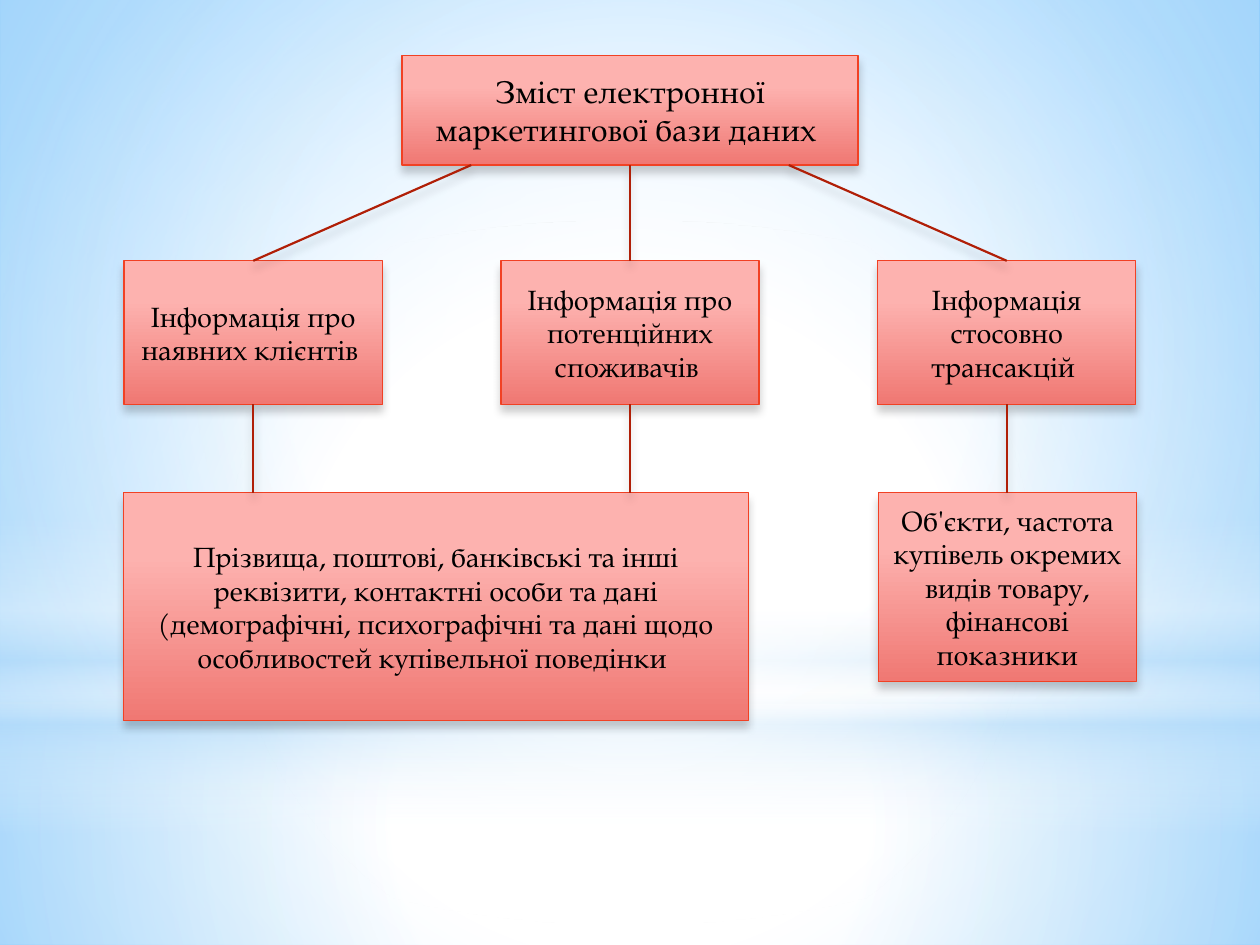
from dataclasses import dataclass
from typing import Any, NamedTuple

from lxml import etree
from pptx import Presentation
from pptx.dml.color import RGBColor
from pptx.enum.shapes import MSO_CONNECTOR, MSO_SHAPE
from pptx.enum.text import MSO_ANCHOR, PP_ALIGN
from pptx.oxml.ns import qn
from pptx.util import Inches, Pt

RECTANGLE = MSO_SHAPE.RECTANGLE
ELLIPSE = MSO_SHAPE.OVAL
STRAIGHT = MSO_CONNECTOR.STRAIGHT
MIDDLE = MSO_ANCHOR.MIDDLE
CENTER = PP_ALIGN.CENTER

FONT = "TeX Gyre Pagella"
TEXT_COLOR = "000000"
BORDER_COLOR = "F14124"
LINK_COLOR = "B01F07"
WHITE = "FFFFFF"
PALE_BLUE = "B4DCFA"

COLUMN_CENTERS = (2.01, 5, 7.99)
COLUMN_WIDTH = 2.05
LEFT_EDGE = 0.98
RIGHT_EDGE = 6.97
TOP_BOTTOM = 1.31
GROUP_TOP = 2.07
GROUP_HEIGHT = 1.14
GROUP_BOTTOM = GROUP_TOP + GROUP_HEIGHT
DETAIL_TOP = 3.91


class Stop(NamedTuple):
    position: int
    color: str
    opacity: int = 100


@dataclass(frozen=True)
class Gradient:
    stops: tuple[Stop, ...]
    focus: tuple[int, int, int, int] | None = None


@dataclass(frozen=True)
class Layer:
    shape_type: Any
    top: float
    height: float
    gradient: Gradient


@dataclass(frozen=True)
class Node:
    left: float
    top: float
    width: float
    height: float
    text: str
    size: int = 16


@dataclass(frozen=True)
class Link:
    start: tuple[float, float]
    end: tuple[float, float]


CENTERED = (50, 50, 50, 50)
BACKGROUND = Gradient(
    (Stop(0, WHITE), Stop(42, WHITE), Stop(100, "63BCFF")), (24, 44, 24, 12)
)
NODE_FILL = Gradient((Stop(28, "FDB2AF"), Stop(100, "F07873")))

LAYERS = (
    Layer(RECTANGLE, 5.58, 1.92, Gradient(
        (Stop(0, WHITE, 91), Stop(37, WHITE, 76), Stop(100, PALE_BLUE, 79)), CENTERED)),
    Layer(RECTANGLE, 0, 5.58, Gradient(
        (Stop(0, WHITE, 89), Stop(48, WHITE, 62), Stop(100, PALE_BLUE, 79)), CENTERED)),
    Layer(RECTANGLE, 4.12, 2.5, Gradient(
        (Stop(0, WHITE, 0), Stop(29, WHITE, 30), Stop(45, PALE_BLUE, 40),
         Stop(55, WHITE, 26), Stop(65, PALE_BLUE, 60), Stop(100, WHITE, 0)))),
    Layer(ELLIPSE, 1.75, 5.58, Gradient((Stop(0, WHITE), Stop(56, WHITE, 0)), CENTERED)),
)

GROUP_TEXTS = (
    "Інформація про наявних клієнтів ",
    "Інформація про потенційних споживачів ",
    "Інформація стосовно трансакцій ",
)

NODES = (
    Node(3.19, 0.44, 3.62, 0.87, "Зміст електронної маркетингової бази даних ", 18),
    *(
        Node(center - COLUMN_WIDTH / 2, GROUP_TOP, COLUMN_WIDTH, GROUP_HEIGHT, text)
        for center, text in zip(COLUMN_CENTERS, GROUP_TEXTS)
    ),
    Node(LEFT_EDGE, DETAIL_TOP, 4.96, 1.81,
         "Прізвища, поштові, банківські та інші реквізити, контактні особи та дані "
         "(демографічні, психографічні та дані щодо особливостей купівельної поведінки "),
    Node(RIGHT_EDGE, DETAIL_TOP, COLUMN_WIDTH, 1.5,
         "Об'єкти, частота купівель окремих видів товару, фінансові показники"),
)

LINKS = (
    *(
        Link((center, GROUP_TOP), (start, TOP_BOTTOM))
        for center, start in zip(COLUMN_CENTERS, (3.74, 5, 6.26))
    ),
    *(Link((center, GROUP_BOTTOM), (center, DETAIL_TOP)) for center in COLUMN_CENTERS),
)


def rgb(color: str) -> RGBColor:
    return RGBColor.from_string(color)


def add_child(parent: Any, tag: str, **attributes: Any) -> Any:
    values = {name: str(value) for name, value in attributes.items()}
    return etree.SubElement(parent, qn(tag), values)


def add_color(parent: Any, color: str, opacity: int) -> None:
    element = add_child(parent, "a:srgbClr", val=color)
    if opacity < 100:
        add_child(element, "a:alpha", val=opacity * 1000)


def apply_gradient(fill: Any, properties: Any, gradient: Gradient) -> None:
    fill.solid()
    solid = properties.find(qn("a:solidFill"))
    element = etree.Element(qn("a:gradFill"), rotWithShape="1")
    stops = add_child(element, "a:gsLst")
    for stop in gradient.stops:
        item = add_child(stops, "a:gs", pos=stop.position * 1000)
        add_color(item, stop.color, stop.opacity)
    if gradient.focus:
        shade = add_child(element, "a:path", path="circle")
        edges = {side: inset * 1000 for side, inset in zip("ltrb", gradient.focus)}
        add_child(shade, "a:fillToRect", **edges)
    else:
        add_child(element, "a:lin", ang=5400000, scaled=0)
    properties.replace(solid, element)


def add_shadow(properties: Any) -> None:
    effects = properties.find(qn("a:effectLst"))
    if effects is None:
        effects = add_child(properties, "a:effectLst")
    shadow = add_child(effects, "a:outerShdw", blurRad=Pt(5), dist=Pt(4),
                       dir=5400000, algn="ctr", rotWithShape=1)
    add_color(shadow, "000000", 20)


def draw_layer(page: Any, layer: Layer) -> None:
    shape = page.shapes.add_shape(
        layer.shape_type, 0, Inches(layer.top), Inches(10), Inches(layer.height))
    shape.shadow.inherit = False
    shape.line.fill.background()
    apply_gradient(shape.fill, shape._element.spPr, layer.gradient)


def draw_node(page: Any, node: Node) -> None:
    box = page.shapes.add_shape(
        RECTANGLE, Inches(node.left), Inches(node.top),
        Inches(node.width), Inches(node.height))
    box.shadow.inherit = False
    box.line.color.rgb = rgb(BORDER_COLOR)
    box.line.width = Pt(0.75)
    apply_gradient(box.fill, box._element.spPr, NODE_FILL)
    add_shadow(box._element.spPr)
    frame = box.text_frame
    frame.word_wrap = True
    frame.vertical_anchor = MIDDLE
    frame.text = node.text
    para = frame.paragraphs[0]
    para.alignment = CENTER
    para.font.name = FONT
    para.font.size = Pt(node.size)
    para.font.color.rgb = rgb(TEXT_COLOR)


def draw_link(page: Any, link: Link) -> None:
    points = (Inches(value) for value in (*link.start, *link.end))
    connector = page.shapes.add_connector(STRAIGHT, *points)
    connector.line.color.rgb = rgb(LINK_COLOR)
    connector.line.width = Pt(1.25)
    add_shadow(connector._element.spPr)


def main() -> None:
    deck = Presentation()
    deck.slide_width, deck.slide_height = Inches(10), Inches(7.5)
    page = deck.slides.add_slide(deck.slide_layouts[6])
    background = page.background.fill
    background.solid()
    apply_gradient(background, page._element.find(f".//{qn('p:bgPr')}"), BACKGROUND)
    for layer in LAYERS:
        draw_layer(page, layer)
    for node in NODES:
        draw_node(page, node)
    for link in LINKS:
        draw_link(page, link)
    deck.save("out.pptx")


if __name__ == "__main__":
    main()
